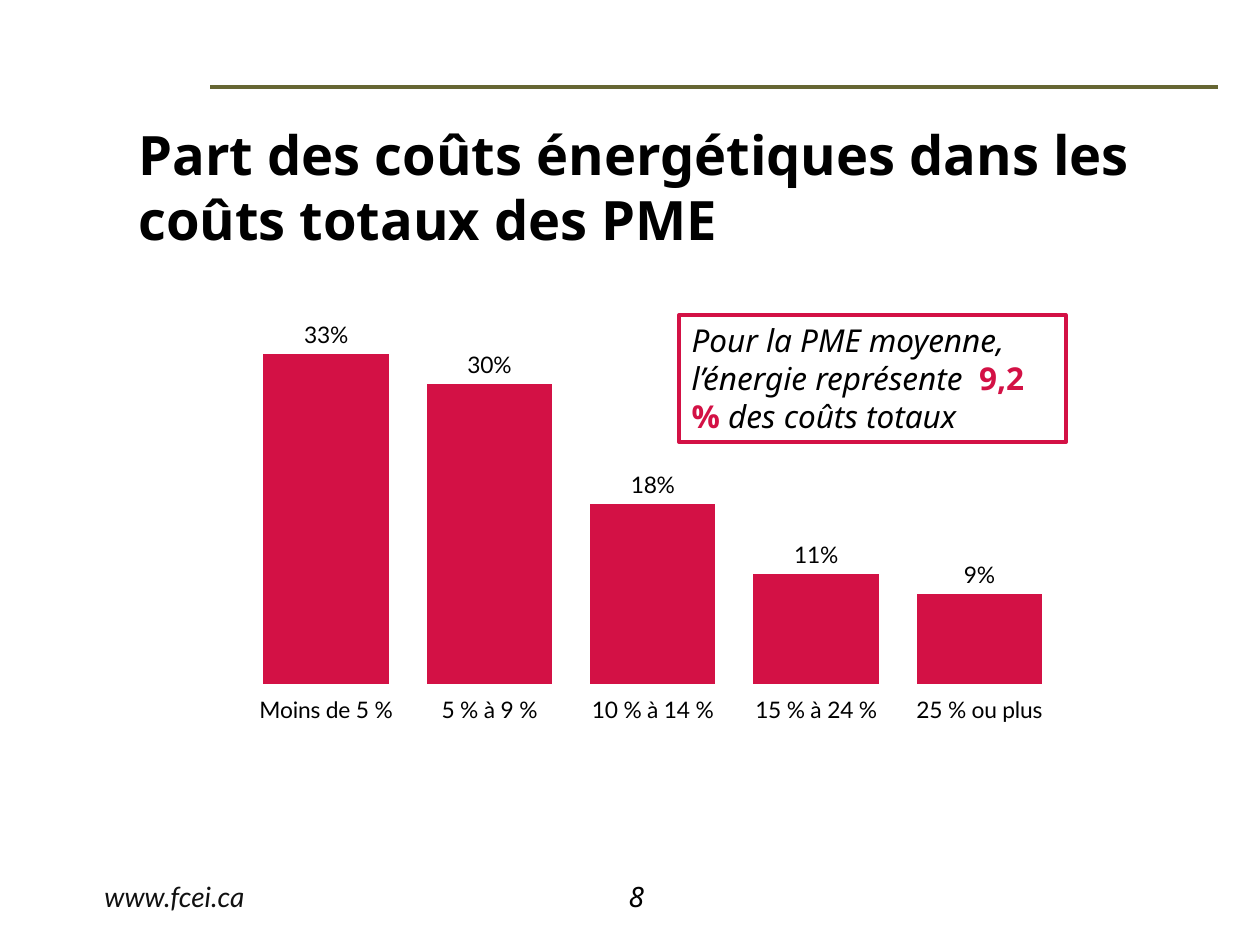
from lxml import etree
from pptx import Presentation
from pptx.chart.data import CategoryChartData
from pptx.dml.color import RGBColor
from pptx.enum.chart import XL_CHART_TYPE, XL_LABEL_POSITION, XL_TICK_MARK
from pptx.enum.shapes import MSO_CONNECTOR, MSO_SHAPE
from pptx.enum.text import MSO_ANCHOR, PP_ALIGN
from pptx.oxml import parse_xml
from pptx.oxml.ns import nsdecls, qn
from pptx.util import Inches, Pt

BLACK = RGBColor(0x00, 0x00, 0x00)
WHITE = RGBColor(0xFF, 0xFF, 0xFF)
DARK_GREY = RGBColor(0x11, 0x11, 0x11)
OLIVE = RGBColor(0x66, 0x66, 0x33)
CRIMSON = RGBColor(0xD3, 0x11, 0x45)

BODY_FONT = "Noto Sans"
LABEL_FONT = "Lato"

ENERGY_SHARES = {
    "Moins de 5 %": 0.33,
    "5 % à 9 %": 0.30,
    "10 % à 14 %": 0.18,
    "15 % à 24 %": 0.11,
    "25 % ou plus": 0.09,
}


def set_font(font, size, color=BLACK, name=BODY_FONT, bold=False, italic=False):
    font.name = name
    font.size = Pt(size)
    font.color.rgb = color
    font.bold = bold
    font.italic = italic


def add_text(slide, box, text, size, align=PP_ALIGN.LEFT,
             anchor=MSO_ANCHOR.TOP, **style):
    shape = slide.shapes.add_textbox(*map(Inches, box))
    frame = shape.text_frame
    frame.word_wrap = True
    frame.vertical_anchor = anchor
    paragraph = frame.paragraphs[0]
    paragraph.text = text
    paragraph.alignment = align
    set_font(paragraph.font, size, **style)


def add_header(slide, rule_box, title_box):
    # Rule across the top
    left, top, width, height = rule_box
    rule = slide.shapes.add_connector(
        MSO_CONNECTOR.STRAIGHT, Inches(left), Inches(top),
        Inches(left + width), Inches(top + height))
    rule.line.color.rgb = OLIVE
    rule.line.width = Pt(2)
    etree.SubElement(rule._element.spPr, qn("a:effectLst"))

    # Title
    add_text(slide, title_box,
             "Part des coûts énergétiques dans les coûts totaux des PME",
             31, anchor=MSO_ANCHOR.MIDDLE, bold=True)


def set_plot_layout(chart, x, y, width, height):
    plot_area = chart._chartSpace.chart.plotArea
    for layout in plot_area.findall(qn("c:layout")):
        plot_area.remove(layout)
    plot_area.insert(0, parse_xml(
        f'<c:layout {nsdecls("c")}><c:manualLayout>'
        '<c:layoutTarget val="inner"/>'
        '<c:xMode val="edge"/><c:yMode val="edge"/>'
        f'<c:x val="{x}"/><c:y val="{y}"/>'
        f'<c:w val="{width}"/><c:h val="{height}"/>'
        '</c:manualLayout></c:layout>'))


def add_share_chart(slide, box):
    data = CategoryChartData(number_format="0%")
    data.categories = list(ENERGY_SHARES)
    data.add_series("Part des PME", list(ENERGY_SHARES.values()))
    chart = slide.shapes.add_chart(
        XL_CHART_TYPE.COLUMN_CLUSTERED, *map(Inches, box), data).chart
    chart.has_legend = False
    chart.has_title = False
    set_font(chart.font, 13, name=LABEL_FONT)
    set_plot_layout(chart, 0.02, 0.06, 0.93, 0.72)

    # Axes
    value_axis = chart.value_axis
    value_axis.minimum_scale = 0
    value_axis.maximum_scale = 0.35
    value_axis.has_major_gridlines = False
    value_axis.visible = False
    category_axis = chart.category_axis
    category_axis.major_tick_mark = XL_TICK_MARK.OUTSIDE
    category_axis.format.line.fill.background()
    set_font(category_axis.tick_labels.font, 13, name=LABEL_FONT)

    # Columns and their labels
    plot = chart.plots[0]
    plot.gap_width = 30
    plot.vary_by_categories = False
    fill = plot.series[0].format.fill
    fill.solid()
    fill.fore_color.rgb = CRIMSON
    plot.has_data_labels = True
    labels = plot.data_labels
    labels.show_value = True
    labels.number_format = "0%"
    labels.number_format_is_linked = False
    labels.position = XL_LABEL_POSITION.OUTSIDE_END
    set_font(labels.font, 13, name=LABEL_FONT)


def add_callout(slide, box):
    callout = slide.shapes.add_shape(MSO_SHAPE.RECTANGLE, *map(Inches, box))
    callout.shadow.inherit = False
    callout.fill.solid()
    callout.fill.fore_color.rgb = WHITE
    callout.line.color.rgb = CRIMSON
    callout.line.width = Pt(2)
    frame = callout.text_frame
    frame.word_wrap = True
    frame.vertical_anchor = MSO_ANCHOR.TOP
    paragraph = frame.paragraphs[0]
    paragraph.alignment = PP_ALIGN.LEFT
    normal = {"italic": True}
    strong = {"color": CRIMSON, "bold": True}
    for text, style in (
        ("Pour la PME moyenne, l’énergie représente  ", normal),
        ("9,2 % ", strong),
        ("des coûts totaux", normal),
    ):
        run = paragraph.add_run()
        run.text = text
        set_font(run.font, 18, **style)


def add_footer(slide, site_box, number_box):
    add_text(slide, site_box, "www.fcei.ca", 16, color=DARK_GREY,
             name=LABEL_FONT, italic=True)
    add_text(slide, number_box, "8", 16, align=PP_ALIGN.CENTER, italic=True)


def main():
    presentation = Presentation()
    presentation.slide_width = Inches(10)
    presentation.slide_height = Inches(7.5)
    slide = presentation.slides.add_slide(presentation.slide_layouts[6])

    add_header(slide, (1.67, 0.69, 8, 0), (1, 0.89, 8.66, 1.18))
    add_share_chart(slide, (1.8, 2.42, 6.97, 3.86))
    add_callout(slide, (5.39, 2.5, 3.07, 1.01))
    add_footer(slide, (0.73, 6.93, 1.65, 0.37), (4.01, 6.93, 2.08, 0.5))

    presentation.save("out.pptx")


if __name__ == "__main__":
    main()
